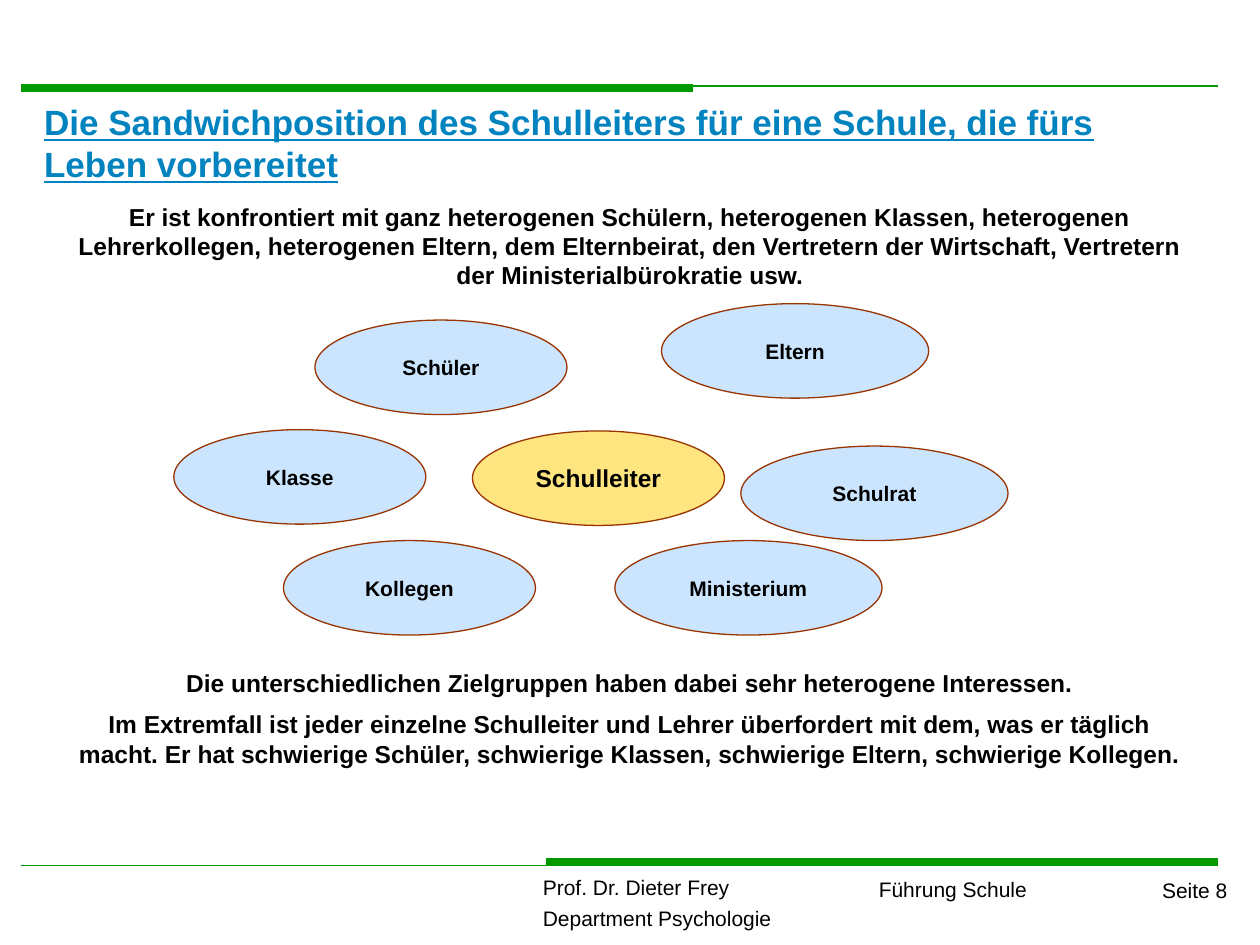
from lxml import etree
from pptx import Presentation
from pptx.dml.color import RGBColor
from pptx.enum.shapes import MSO_CONNECTOR, MSO_SHAPE
from pptx.enum.text import MSO_ANCHOR, MSO_AUTO_SIZE, PP_ALIGN
from pptx.oxml.ns import qn
from pptx.util import Inches, Pt

LEFT, CENTER, RIGHT = PP_ALIGN.LEFT, PP_ALIGN.CENTER, PP_ALIGN.RIGHT
TOP, MIDDLE = MSO_ANCHOR.TOP, MSO_ANCHOR.MIDDLE
NO_FIT = MSO_AUTO_SIZE.NONE
STRAIGHT = MSO_CONNECTOR.STRAIGHT
OVAL = MSO_SHAPE.OVAL

COLORS = {
    "ink": "000000",
    "paper": "FFFFFF",
    "title": "0083BF",
    "rule": "009900",
    "edge": "993300",
    "group": "99CCFF",
    "head": "FFCC00",
}


def color(name):
    return RGBColor.from_string(COLORS[name])


def write(frame, lines, size, align=LEFT, bold=False, ink="ink",
          anchor=TOP, gap=0, pitch=None):
    """Fill a text frame with one paragraph per line."""
    frame.word_wrap = True
    frame.auto_size = NO_FIT
    frame.vertical_anchor = anchor
    for i, line in enumerate(lines):
        para = frame.paragraphs[0] if i == 0 else frame.add_paragraph()
        para.text = line
        para.alignment = align
        if i:
            para.space_before = Pt(gap)
        if pitch:
            para.line_spacing = pitch
        font = para.font
        font.name, font.size, font.bold = "Arial", Pt(size), bold
        font.color.rgb = color(ink)


def add_text(slide, box, lines, size, **style):
    shape = slide.shapes.add_textbox(*map(Inches, box))
    write(shape.text_frame, lines, size, **style)
    return shape


def add_rule(slide, x1, x2, y, width):
    rule = slide.shapes.add_connector(
        STRAIGHT, Inches(x1), Inches(y), Inches(x2), Inches(y))
    rule.line.color.rgb = color("rule")
    rule.line.width = Pt(width)
    etree.SubElement(rule._element.spPr, qn("a:effectLst"))


def add_rules(slide, box):
    """Thin and thick rules along the top and bottom of the box."""
    x, y, w, h = box
    end, foot = x + w, y + h
    add_rule(slide, x + 3.66, end, y, 1)
    add_rule(slide, x, x + 5.33, y + 0.02, 4.5)
    add_rule(slide, x, x + 6, foot, 1)
    add_rule(slide, end - 5.34, end, foot - 0.03, 4.5)


def add_footer(slide, box):
    x, y, w, h = box
    add_text(slide, (x, y, 3.62, h),
             ["Prof. Dr. Dieter Frey", "Department Psychologie"], 12,
             gap=6, pitch=0.8)
    add_text(slide, (x + 1.81, y + 0.02, 2.23, 0.26),
             ["Führung Schule"], 12, align=RIGHT, pitch=0.8)
    add_text(slide, (x + w - 1.92, y + 0.04, 1.92, 0.24),
             ["Seite 8"], 12, align=RIGHT, pitch=0.7)


def add_title(slide, box, text):
    title = slide.shapes.title
    title.left, title.top, title.width, title.height = map(Inches, box)
    write(title.text_frame, [text], 20, bold=True, ink="title")
    title.text_frame.paragraphs[0].font.underline = True


def add_body(slide, box, lines):
    body = add_text(slide, box, lines, 14, align=CENTER, bold=True, gap=7)
    body.fill.solid()
    body.fill.fore_color.rgb = color("paper")


def add_oval(group, box, text, size, fill):
    oval = group.shapes.add_shape(OVAL, *map(Inches, box))
    oval.shadow.inherit = False
    oval.fill.solid()
    oval.fill.fore_color.rgb = color(fill)
    tint = oval._element.spPr.find(qn("a:solidFill"))[0]
    etree.SubElement(tint, qn("a:alpha"), val="50000")
    oval.line.color.rgb = color("edge")
    oval.line.width = Pt(0.75)
    write(oval.text_frame, [text], size, align=CENTER, bold=True,
          anchor=MIDDLE)


def add_ring(slide, box):
    """The head in the middle of the groups around it."""
    x, y, w, h = box
    group = slide.shapes.add_group_shape()
    tall, slim, wide = 0.75, 2, 2.12
    low = h - tall
    parts = [
        ("Eltern", 3.87, 0, wide),
        ("Schüler", 1.12, 0.13, slim),
        ("Klasse", 0, 1, slim),
        ("Schulrat", w - wide, 1.13, wide),
        ("Kollegen", 0.87, low, slim),
        ("Ministerium", 3.5, low, wide),
    ]
    for text, dx, dy, width in parts:
        add_oval(group, (x + dx, y + dy, width, tall), text, 12, "group")
    add_oval(group, (x + 2.37, y + 1.01, slim, tall),
             "Schulleiter", 14, "head")


def main():
    deck = Presentation()
    deck.slide_width, deck.slide_height = Inches(10), Inches(7.5)
    slide = deck.slides.add_slide(deck.slide_layouts[5])

    # Frame
    add_rules(slide, (0.17, 0.68, 9.5, 6.19))
    add_footer(slide, (4.21, 6.93, 5.63, 0.52))

    # Title and lead
    add_title(slide, (0.25, 0.75, 9, 0.67),
              "Die Sandwichposition des Schulleiters für eine Schule, "
              "die fürs Leben vorbereitet")
    add_body(slide, (0.43, 1.55, 9.14, 0.81), [
        "Er ist konfrontiert mit ganz heterogenen Schülern, heterogenen "
        "Klassen, heterogenen Lehrerkollegen, heterogenen Eltern, dem "
        "Elternbeirat, den Vertretern der Wirtschaft, Vertretern der "
        "Ministerialbürokratie usw."])

    # Diagram
    add_ring(slide, (1.38, 2.41, 6.62, 2.63))

    # Conclusion
    add_body(slide, (0.43, 5.25, 9.14, 0.93), [
        "Die unterschiedlichen Zielgruppen haben dabei sehr heterogene "
        "Interessen.",
        "Im Extremfall ist jeder einzelne Schulleiter und Lehrer überfordert "
        "mit dem, was er täglich macht. Er hat schwierige Schüler, schwierige "
        "Klassen, schwierige Eltern, schwierige Kollegen."])

    deck.save("out.pptx")


if __name__ == "__main__":
    main()
